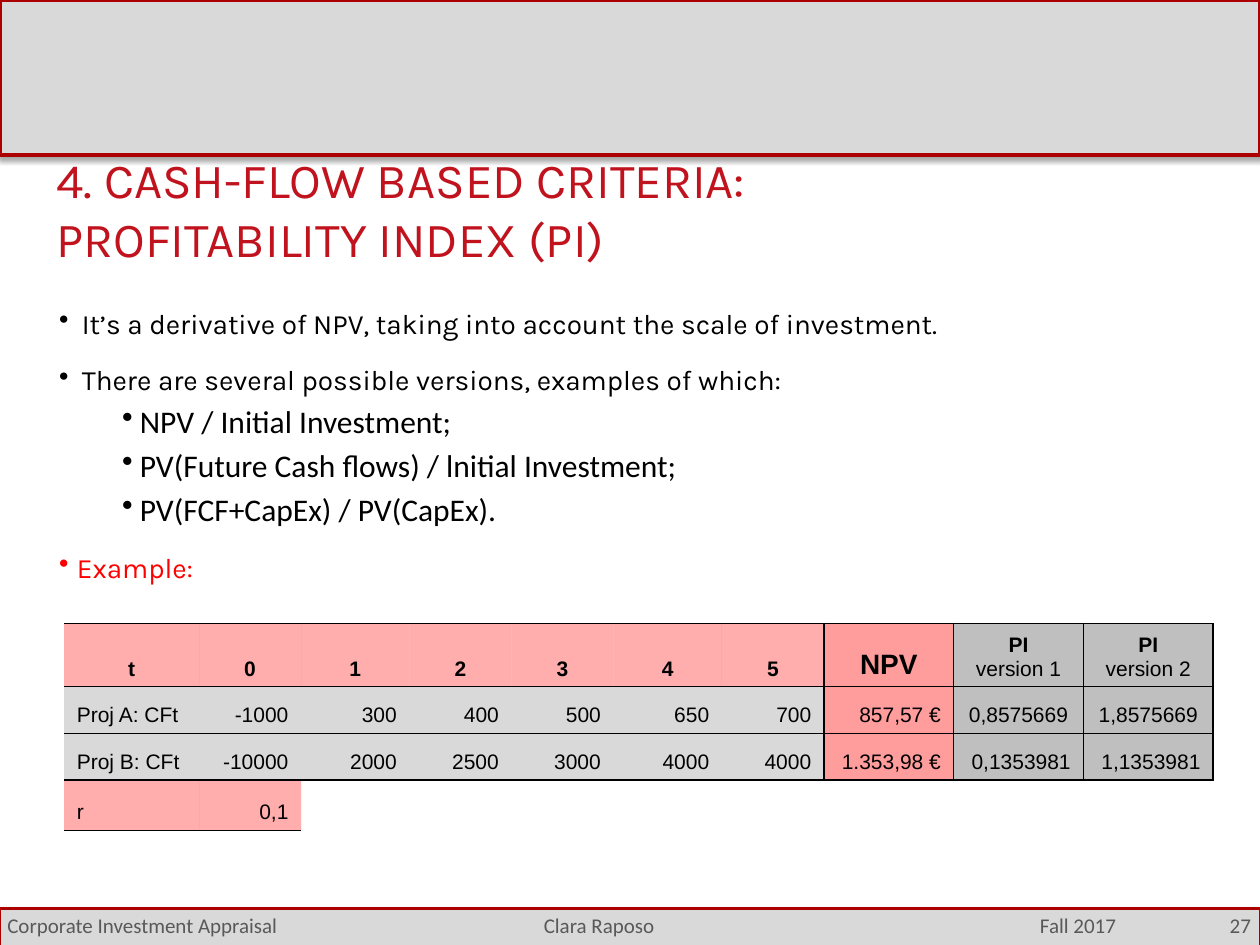
import dataclasses

import lxml.etree
import pptx
import pptx.dml.color
import pptx.enum.shapes
import pptx.enum.text
import pptx.oxml.ns
import pptx.util

Inches = pptx.util.Inches
Pt = pptx.util.Pt
ALIGN = pptx.enum.text.PP_ALIGN
ANCHOR = pptx.enum.text.MSO_ANCHOR


@dataclasses.dataclass(frozen=True)
class Theme:
    black: str = "000000"
    red: str = "FF0000"
    title: str = "C1131E"
    frame: str = "AC0000"
    band: str = "D9D9D9"
    index: str = "BFBFBF"
    footer: str = "595959"
    title_size: int = 28
    body_size: int = 16
    sub_size: int = 18
    small_size: int = 12


theme = Theme()


def add_xml(parent, tag, position=None, **attributes):
    """Add a DrawingML child element, at the end unless a position is given."""
    element = lxml.etree.Element(pptx.oxml.ns.qn(tag), attributes)
    parent.insert(len(parent) if position is None else position, element)
    return element


def add_span(para, text, font, size, color, bold=False):
    span = para.add_run()
    span.text = text
    span.font.name = font
    span.font.size = Pt(size)
    span.font.bold = bold
    span.font.color.rgb = pptx.dml.color.RGBColor.from_string(color)


deck = pptx.Presentation()
deck.slide_width = Inches(10)
deck.slide_height = Inches(7.5)
page = deck.slides.add_slide(deck.slide_layouts[6])

# Header and footer bands
for top, height, line_width in [(0, 1.23, 2.25), (7.21, 0.32, 1.5)]:
    band = page.shapes.add_shape(pptx.enum.shapes.MSO_SHAPE.RECTANGLE,
                                 0, Inches(top), Inches(10), Inches(height))
    band.fill.solid()
    band.fill.fore_color.rgb = pptx.dml.color.RGBColor.from_string(theme.band)
    band.line.color.rgb = pptx.dml.color.RGBColor.from_string(theme.frame)
    band.line.width = Pt(line_width)
    band.shadow.inherit = False
    effects = band.element.spPr.find(pptx.oxml.ns.qn("a:effectLst"))
    shadow = add_xml(effects, "a:outerShdw", blurRad=str(Pt(3.1)), dist=str(Pt(1.8)),
                     dir="5400000", rotWithShape="0")
    shade = add_xml(shadow, "a:srgbClr", val=theme.black)
    add_xml(shade, "a:alpha", val="35000")

# Body: level, text, colour
points = [
    (0, "It’s a derivative of NPV, taking into account the scale of investment.", theme.black),
    (0, "There are several possible versions, examples of which:", theme.black),
    (1, "NPV / Initial Investment;", theme.black),
    (1, "PV(Future Cash flows) / lnitial Investment;", theme.black),
    (1, "PV(FCF+CapEx) / PV(CapEx).", theme.black),
    (0, "Example:", theme.red),
]
box = page.shapes.add_textbox(Inches(0.39), Inches(2.25), Inches(9.22), Inches(4.31))
frame = box.text_frame
frame.word_wrap = True
frame.margin_left = Inches(0.08)
for number, (level, text, color) in enumerate(points):
    para = frame.add_paragraph() if number else frame.paragraphs[0]
    hanging = 0.14 if level or color == theme.red else 0.18
    properties = para._p.get_or_add_pPr()
    properties.set("marL", str(Inches(0.5 * level + hanging)))
    properties.set("indent", str(-Inches(hanging)))
    add_xml(properties, "a:buChar", char="•")
    para.level = level
    if number:
        para.space_before = Pt(3.4)
    if level:
        add_span(para, text, "Calibri", theme.sub_size, color)
    else:
        para.line_spacing = 1.5
        add_span(para, text, "Karla", theme.body_size, color)

# Title
box = page.shapes.add_textbox(Inches(0.35), Inches(1.47), Inches(5.67), Inches(0.7))
box.text_frame.word_wrap = True
box.text_frame.vertical_anchor = ANCHOR.BOTTOM
add_span(box.text_frame.paragraphs[0], "4. CASH-FLOW BASED CRITERIA: PROFITABILITY INDEX (PI)",
         "Karla", theme.title_size, theme.title)

# Cash-flow table
rows = [
    ["t", "0", "1", "2", "3", "4", "5", "NPV", "PI\nversion 1", "PI\nversion 2"],
    ["Proj A: CFt", "-1000", "300", "400", "500", "650", "700",
     "857,57 €", "0,8575669", "1,8575669"],
    ["Proj B: CFt", "-10000", "2000", "2500", "3000", "4000", "4000",
     "1.353,98 €", "0,1353981", "1,1353981"],
    ["r", "0,1"] + [""] * 8,
]
column_widths = [1.07, 0.81, 0.86, 0.81, 0.81, 0.86, 0.81, 1.03, 1.03, 1.03]
row_heights = [0.48, 0.37, 0.37, 0.4]
npv_column = 7
table_shape = page.shapes.add_table(len(rows), len(column_widths), Inches(0.51), Inches(4.95),
                                    Inches(sum(column_widths)), Inches(sum(row_heights)))
table = table_shape.table
table.first_row = table.horz_banding = False
# The built-in style without fills or grid
table._tbl.tblPr.find(pptx.oxml.ns.qn("a:tableStyleId")).text = (
    "{2D5ABB26-0587-4C30-8999-92F81FD0307C}")
for column, width in zip(table.columns, column_widths):
    column.width = Inches(width)
for row, height in zip(table.rows, row_heights):
    row.height = Inches(height)

for r, texts in enumerate(rows):
    for c, text in enumerate(texts):
        cell = table.cell(r, c)
        cell.vertical_anchor = ANCHOR.BOTTOM
        if not text:
            cell.fill.background()
            continue

        # Text
        if r == 0 or (r == 1 and c > npv_column):
            align = ALIGN.CENTER
        else:
            align = ALIGN.RIGHT if c else ALIGN.LEFT
        size = theme.body_size if text == "NPV" else theme.small_size
        for number, line in enumerate(text.split("\n")):
            para = cell.text_frame.add_paragraph() if number else cell.text_frame.paragraphs[0]
            para.alignment = align
            add_span(para, line, "Arial", size, theme.black, r == 0 and number == 0)

        # Fill, with opacity in percent
        if r < 3 and c > npv_column:
            color, opacity = theme.index, 100
        elif r < 3 and c == npv_column:
            color, opacity = theme.red, 39
        elif r in (0, 3):
            color, opacity = theme.red, 32
        else:
            color, opacity = theme.band, 100
        cell.fill.solid()
        cell.fill.fore_color.rgb = pptx.dml.color.RGBColor.from_string(color)
        properties = cell._tc.get_or_add_tcPr()
        if opacity < 100:
            tint = properties.find(".//" + pptx.oxml.ns.qn("a:srgbClr"))
            add_xml(tint, "a:alpha", val=str(opacity * 1000))

        # Borders
        boxed = c >= npv_column
        sides = {
            "a:lnL": boxed,
            "a:lnR": boxed or c == npv_column - 1 and r < 3,
            "a:lnT": boxed or r in (0, 3) or r == 1,
            "a:lnB": boxed or r != 1,
        }
        drawn = [side for side, shown in sides.items() if shown]
        for position, side in enumerate(drawn):
            edge = add_xml(properties, side, position, w=str(Pt(1)))
            add_xml(add_xml(edge, "a:solidFill"), "a:srgbClr", val=theme.black)

# Footer: left, width, alignment, text, right-aligned tab stops
footers = [
    (-0.04, 2.61, ALIGN.LEFT, "Corporate Investment Appraisal", []),
    (3.17, 3.17, ALIGN.CENTER, "Clara Raposo", []),
    (7.71, 2.33, ALIGN.LEFT, "\tFall 2017\t27", [1.05, 2.12]),
]
for left, width, align, text, stops in footers:
    box = page.shapes.add_textbox(Inches(left), Inches(7.14), Inches(width), Inches(0.4))
    box.text_frame.word_wrap = True
    box.text_frame.vertical_anchor = ANCHOR.MIDDLE
    para = box.text_frame.paragraphs[0]
    para.alignment = align
    if stops:
        tabs = add_xml(para._p.get_or_add_pPr(), "a:tabLst")
        for stop in stops:
            add_xml(tabs, "a:tab", pos=str(Inches(stop)), algn="r")
    add_span(para, text, "Calibri", theme.small_size, theme.footer)

deck.save("out.pptx")
